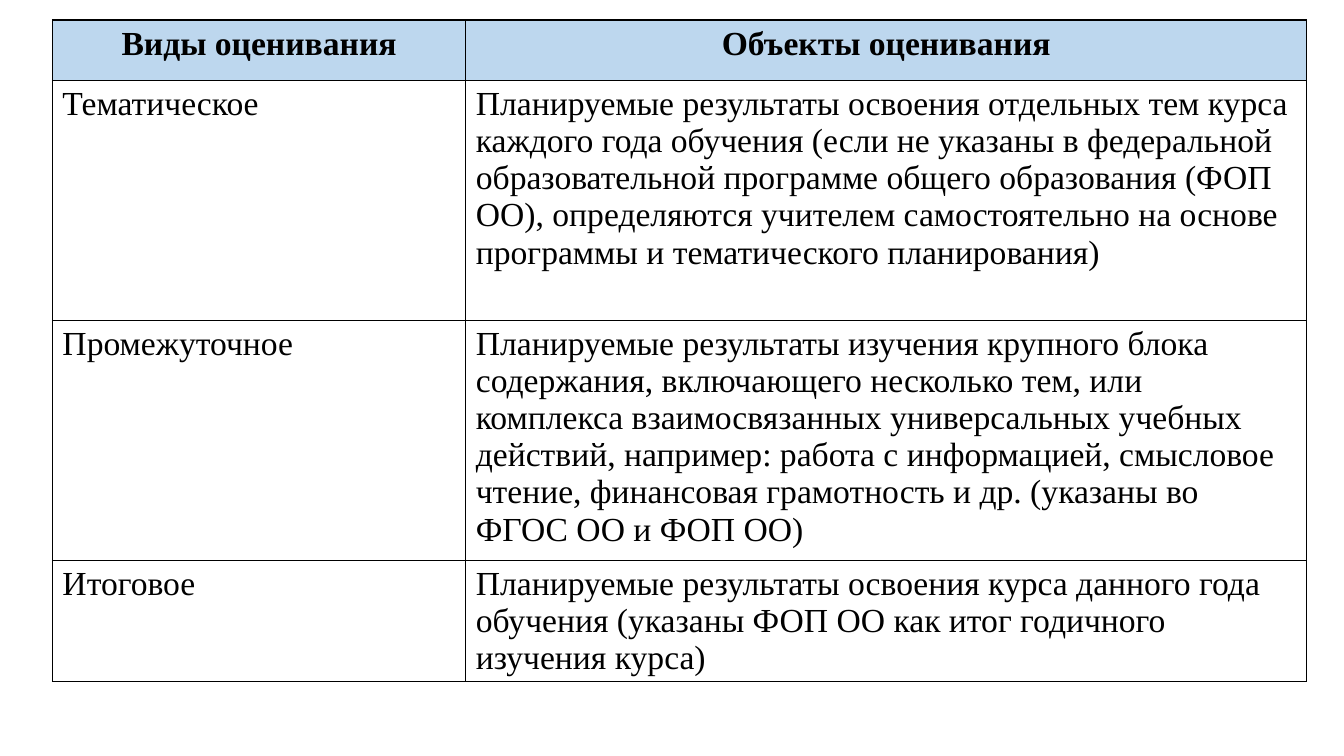
"""Build a slide with a table of assessment types and their objects."""
import pptx
import pptx.dml.color
import pptx.enum.text
import pptx.oxml
import pptx.oxml.ns
import pptx.util

BLACK = pptx.dml.color.RGBColor(0x00, 0x00, 0x00)
HEADER_BLUE = pptx.dml.color.RGBColor(0xBD, 0xD7, 0xEE)

COLUMN_SHARES = [30.76, 62.57]
ROW_SHARES = [8, 31.73, 31.73, 16]
ASSESSMENTS = [
    ("Виды оценивания", "Объекты оценивания"),
    ("Тематическое",
     "Планируемые результаты освоения отдельных тем курса каждого года обучения "
     "(если не указаны в федеральной образовательной программе общего образования "
     "(ФОП ОО), определяются учителем самостоятельно на основе программы и "
     "тематического планирования)"),
    ("Промежуточное",
     "Планируемые результаты изучения крупного блока содержания, включающего "
     "несколько тем, или комплекса взаимосвязанных универсальных учебных действий, "
     "например: работа с информацией, смысловое чтение, финансовая грамотность и др. "
     "(указаны во ФГОС ОО и ФОП ОО)"),
    ("Итоговое",
     "Планируемые результаты освоения курса данного года обучения "
     "(указаны ФОП ОО как итог годичного изучения курса)"),
]


class SlideBuilder:
    """Hold the style and the slide; lengths are percentages of the slide's size."""

    font_name = "Times New Roman"
    font_size = pptx.util.Pt(24)
    border_width = pptx.util.Pt(1)

    def __init__(self, presentation):
        self.width = presentation.slide_width
        self.height = presentation.slide_height
        self.slide = presentation.slides.add_slide(presentation.slide_layouts[6])

    def across(self, share):
        return round(self.width * share / 100)

    def down(self, share):
        return round(self.height * share / 100)

    def add_table(self, left, top, column_shares, row_shares, texts):
        table = self.slide.shapes.add_table(
            len(row_shares), len(column_shares), self.across(left), self.down(top),
            self.across(sum(column_shares)), self.down(sum(row_shares))).table
        table.horz_banding = False
        for column, share in zip(table.columns, column_shares):
            column.width = self.across(share)
        for row_index, (row, share) in enumerate(zip(table.rows, row_shares)):
            row.height = self.down(share)
            for cell, text in zip(row.cells, texts[row_index]):
                self.format_cell(cell, text, is_header=row_index == 0)

    def format_cell(self, cell, text, is_header):
        cell.text_frame.text = text
        paragraph = cell.text_frame.paragraphs[0]
        if is_header:
            paragraph.alignment = pptx.enum.text.PP_ALIGN.CENTER
            cell.fill.solid()
            cell.fill.fore_color.rgb = HEADER_BLUE
        else:
            cell.fill.background()
        for run in paragraph.runs:
            run.font.name = self.font_name
            run.font.size = self.font_size
            run.font.bold = is_header
            run.font.color.rgb = BLACK
        self.add_borders(cell)

    def add_borders(self, cell):
        properties = cell._tc.get_or_add_tcPr()
        for index, side in enumerate(("lnL", "lnR", "lnT", "lnB")):
            properties.insert(index, pptx.oxml.parse_xml(
                f'<a:{side} {pptx.oxml.ns.nsdecls("a")} w="{self.border_width}">'
                f'<a:solidFill><a:srgbClr val="{BLACK}"/></a:solidFill></a:{side}>'))


def main():
    presentation = pptx.Presentation()
    presentation.slide_width = pptx.util.Inches(13.33)
    presentation.slide_height = pptx.util.Inches(7.5)
    builder = SlideBuilder(presentation)
    builder.add_table(3.9, 2.65, COLUMN_SHARES, ROW_SHARES, ASSESSMENTS)
    presentation.save("out.pptx")


if __name__ == "__main__":
    main()
